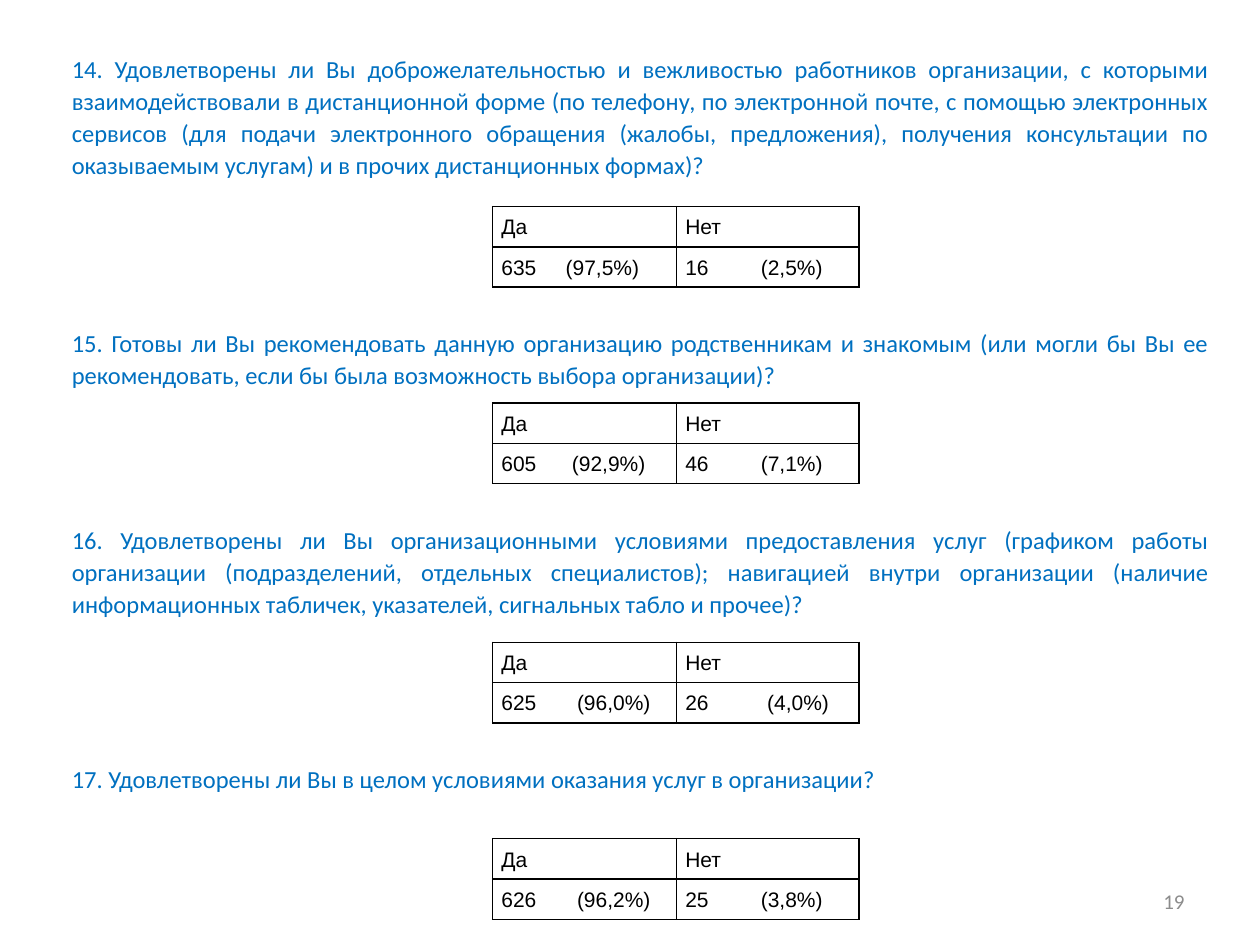
from dataclasses import dataclass

from lxml import etree
from pptx import Presentation
from pptx.dml.color import RGBColor
from pptx.enum.text import MSO_ANCHOR, PP_ALIGN
from pptx.oxml.ns import qn
from pptx.util import Inches, Pt

MIDDLE = MSO_ANCHOR.MIDDLE
TOP = MSO_ANCHOR.TOP
JUSTIFY = PP_ALIGN.JUSTIFY
RIGHT = PP_ALIGN.RIGHT
BLANK_LAYOUT = 6
PLAIN_TABLE = "{2D5ABB26-0587-4C30-8999-92F81FD0307C}"


@dataclass(frozen=True)
class Theme:
    question: RGBColor = RGBColor(0x00, 0x70, 0xC0)
    answer: RGBColor = RGBColor(0x00, 0x00, 0x00)
    number: RGBColor = RGBColor(0x8C, 0x8C, 0x8C)
    question_font: str = "Calibri"
    answer_font: str = "Arial"
    question_size: int = 14
    answer_size: int = 12
    number_size: int = 12
    border: int = 1


THEME = Theme()
COLUMNS = [0.25, 3.16, 0.42, 0.22, 0.47, 0.35, 0.42, 0.22, 0.46, 0.35, 0.23, 2.62]
ROW = 0.32
ANSWER_COLUMNS = (2, 6)
ANSWER_SPAN = 4

SURVEY = [
    (1.22, "14. Удовлетворены ли Вы доброжелательностью и вежливостью работников "
     "организации, с которыми взаимодействовали в дистанционной форме (по телефону, "
     "по электронной почте, с помощью электронных сервисов (для подачи электронного "
     "обращения (жалобы, предложения), получения консультации по оказываемым услугам) "
     "и в прочих дистанционных формах)?",
     [("Да", "635\t(97,5%)", 0.51), ("Нет", "16\t(2,5%)", 0.6)]),
    (0.6, "15. Готовы ли Вы рекомендовать данную организацию родственникам и знакомым "
     "(или могли бы Вы ее рекомендовать, если бы была возможность выбора организации)?",
     [("Да", "605\t(92,9%)", 0.56), ("Нет", "46\t(7,1%)", 0.6)]),
    (0.94, "16. Удовлетворены ли Вы организационными условиями предоставления услуг "
     "(графиком работы организации (подразделений, отдельных специалистов); навигацией "
     "внутри организации (наличие информационных табличек, указателей, сигнальных табло "
     "и прочее)?",
     [("Да", "625\t(96,0%)", 0.6), ("Нет", "26\t(4,0%)", 0.65)]),
    (0.6, "17. Удовлетворены ли Вы в целом условиями оказания услуг в организации?",
     [("Да", "626\t(96,2%)", 0.6), ("Нет", "25\t(3,8%)", 0.6)]),
]


def set_font(p, name, size, color):
    p.font.name = name
    p.font.size = Pt(size)
    p.font.color.rgb = color


def write_cell(cell, text, anchor, name, size, color, tab=None):
    cell.margin_left = cell.margin_right = Inches(0.07)
    cell.vertical_anchor = anchor
    cell.text = text
    p = cell.text_frame.paragraphs[0]
    p.alignment = JUSTIFY
    p.line_spacing = 1.07
    p.space_after = Pt(8)
    if tab:
        tabs = etree.SubElement(p._p.get_or_add_pPr(), qn("a:tabLst"))
        etree.SubElement(tabs, qn("a:tab"), pos=str(Inches(tab)), algn="l")
    set_font(p, name, size, color)


def add_borders(cell, sides):
    tc_pr = cell._tc.get_or_add_tcPr()
    for i, side in enumerate(sides):
        ln = etree.Element(qn(f"a:ln{side}"), w=str(Pt(THEME.border)))
        fill = etree.SubElement(ln, qn("a:solidFill"))
        etree.SubElement(fill, qn("a:srgbClr"), val=str(THEME.answer))
        tc_pr.insert(i, ln)


def add_answer(table, row, col, text, tab=None):
    last = col + ANSWER_SPAN - 1
    table.cell(row, col).merge(table.cell(row, last))
    add_borders(table.cell(row, col), "LRTB")
    for c in range(col + 1, last):
        add_borders(table.cell(row, c), "TB")
    add_borders(table.cell(row, last), "RTB")
    write_cell(table.cell(row, col), text, MIDDLE, THEME.answer_font,
               THEME.answer_size, THEME.answer, tab)


def add_question(table, row, text, answers):
    table.cell(row, 0).merge(table.cell(row, len(COLUMNS) - 1))
    write_cell(table.cell(row, 0), text, TOP, THEME.question_font,
               THEME.question_size, THEME.question)
    for col, (label, result, tab) in zip(ANSWER_COLUMNS, answers):
        add_answer(table, row + 1, col, label)
        add_answer(table, row + 2, col, result, tab)


def add_survey(slide, left, top, width):
    heights = [h for height, _, _ in SURVEY for h in (height, ROW, ROW, ROW)][:-1]
    frame = slide.shapes.add_table(len(heights), len(COLUMNS), left, top, width,
                                   Inches(sum(heights)))
    table = frame.table
    table.first_row = table.horz_banding = False
    table._tbl.tblPr.find(qn("a:tableStyleId")).text = PLAIN_TABLE
    for column, share in zip(table.columns, COLUMNS):
        column.width = int(width * share / sum(COLUMNS))
    for row, height in zip(table.rows, heights):
        row.height = Inches(height)
    for cell in table.iter_cells():
        cell.margin_left = cell.margin_right = 0
        cell.margin_top = cell.margin_bottom = 0
        cell.fill.background()
    for i, (_, text, answers) in enumerate(SURVEY):
        add_question(table, i * 4, text, answers)


def add_page_number(slide, left, top, width, height):
    tf = slide.shapes.add_textbox(left, top, width, height).text_frame
    tf.word_wrap = True
    tf.vertical_anchor = MIDDLE
    p = tf.paragraphs[0]
    p.text = "19"
    p.alignment = RIGHT
    set_font(p, THEME.question_font, THEME.number_size, THEME.number)


def main():
    prs = Presentation()
    prs.slide_width, prs.slide_height = Inches(10), Inches(7.5)
    slide = prs.slides.add_slide(prs.slide_layouts[BLANK_LAYOUT])
    add_page_number(slide, Inches(7.17), Inches(6.95), Inches(2.33), Inches(0.4))
    add_survey(slide, Inches(0.5), Inches(0.42), Inches(9.17))
    prs.save("out.pptx")


if __name__ == "__main__":
    main()
